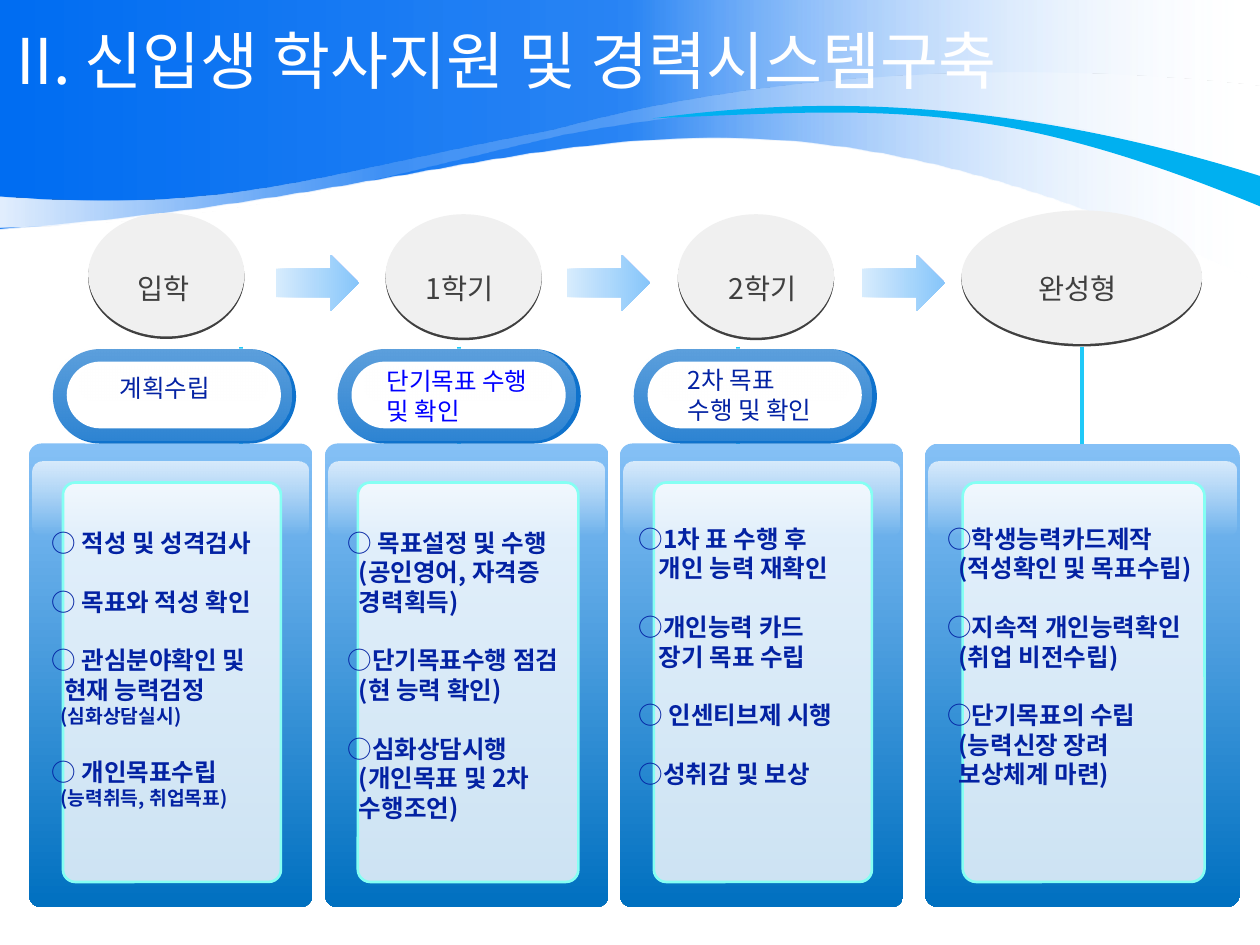
from lxml.etree import SubElement
from pptx import Presentation
from pptx.dml.color import RGBColor
from pptx.enum.shapes import MSO_CONNECTOR, MSO_SHAPE
from pptx.enum.text import MSO_ANCHOR, PP_ALIGN
from pptx.oxml.ns import qn
from pptx.util import Inches, Pt

FONT = "Noto Sans CJK KR"
COLORS = {
    "white": "FFFFFF", "band": "006DF2", "swoosh": "00B0F0", "navy": "0322A3",
    "blue": "0000FF", "label": "404040", "disc": "F0F0F0", "rim": "404040",
    "link": "20C9F8", "pill": "0F72CC", "edge": "85FFF3",
    "panel top": "85C0F6", "panel foot": "0070C0",
    "arrow tail": "D7ECFD", "arrow head": "86C5FA",
}
TITLE = "II. 신입생 학사지원 및 경력시스템구축"

# Gradient stops: position, colour, opacity (percent)
GLOSS = [(0, "white", 70), (100, "white", 0)]
PILL_SHEEN = [(0, "white", 33), (100, "white", 13)]
PANEL_FILL = [(0, "panel top", 100), (100, "panel foot", 100)]
ARROW_FILL = [(0, "arrow tail", 100), (100, "arrow head", 100)]
BAND_FILL = [(0, "band", 100), (50, "band", 83), (100, "white", 0)]
VEIL_FILL = [(0, "white", 90), (31, "white", 16), (86, "white", 24)]

# Outlines: frame, fill, steps (one point is a straight step, three a Bezier step)
OUTLINES = [
    ((-0.01, 0, 10.02, 2.24), BAND_FILL, [
        [(10.01, 0)], [(-0.01, 0)], [(-0.01, 1.81)],
        [(4.49, 1.5), (5.45, 0.14), (10.01, 2.24)]]),
    ((-0.08, 0.34, 10.09, 1.46), VEIL_FILL, [
        [(10.01, 0.69)], [(9.55, 0.63), (6.92, 0.34), (4.4, 1.03)],
        [(2.42, 1.4), (1.86, 1.69), (0.01, 1.56)], [(-0.01, 1.56)], [(-0.01, 1.81)],
        [(2.03, 1.73), (2.66, 1.49), (4.48, 1.07)],
        [(5.43, 0.9), (7.46, 0.55), (10.01, 1.39)]]),
    ((5.18, 0.69, 4.84, 0.96), "swoosh", [
        [(5.18, 0.94)], [(7.04, 0.86), (7.93, 0.78), (10.03, 1.65)], [(10.01, 1.4)],
        [(7.75, 0.69), (6.17, 0.81), (5.18, 0.94)]]),
]

# Stages: label, label left, disc (left, top, width, height), link x
STAGES = [
    ("입학", 0.86, (0.7, 1.69, 1.24, 0.98), 1.91),
    ("1학기", 3.21, (3.06, 1.7, 1.24, 0.98), 3.64),
    ("2학기", 5.61, (5.38, 1.7, 1.24, 0.98), 5.86),
    ("완성형", 8.11, (7.63, 1.67, 1.91, 1.06), 8.59),
]
ARROWS = [2.19, 4.5, 6.84]
# Pills: left, text box (left, top, width), colour, indent, wrap, lines
PILLS = [
    (0.39, (0.59, 2.91, 1.59), "navy", 0.26, False, ["계획수립"]),
    (2.65, (2.97, 2.86, 1.48), "blue", 0, True, ["단기목표 수행 및 확인"]),
    (5.0, (5.36, 2.85, 1.59), "navy", 0, False, ["2차 목표", "수행 및 확인"]),
]
# Panels: left, width, inner inset, text box (left, top, width),
# item indent, further-line indent, items (lists of lines)
PANELS = [
    (0.23, 2.25, 0.27, (0.31, 4.14, 1.95), 0, 0.1, [
        ["○ 적성 및 성격검사"], ["○ 목표와 적성 확인"],
        ["○ 관심분야확인 및", "현재 능력검정", "(심화상담실시)"],
        ["○ 개인목표수립", "(능력취득, 취업목표)"]]),
    (2.58, 2.25, 0.26, (2.66, 4.14, 2.19), 0, 0.09, [
        ["○ 목표설정 및 수행", "(공인영어, 자격증", "경력획득)"],
        ["○단기목표수행 점검", "(현 능력 확인)"],
        ["○심화상담시행", "(개인목표 및 2차", "수행조언)"]]),
    (4.92, 2.25, 0.27, (4.92, 4.11, 2.11), 0.05, 0.21, [
        ["○1차 표 수행 후", "개인 능력 재확인"],
        ["○개인능력 카드", "장기 목표 수립"],
        ["○ 인센티브제 시행"], ["○성취감 및 보상"]]),
    (7.34, 2.5, 0.3, (7.42, 4.11, 2.34), 0, 0.09, [
        ["○학생능력카드제작", "(적성확인 및 목표수립)"],
        ["○지속적 개인능력확인", "(취업 비전수립)"],
        ["○단기목표의 수립", "(능력신장 장려", "보상체계 마련)"]]),
]
SMALL_LINES = {"(심화상담실시)", "(능력취득, 취업목표)"}
LINE_HEIGHT = 16.8


def rgb(name):
    return RGBColor.from_string(COLORS[name])


def paint(shape, fill, angle=90, opacity=100, edge=None):
    """Fill with a colour name or a list of gradient stops."""
    shape.shadow.inherit = False
    if isinstance(fill, str):
        shape.fill.solid()
        shape.fill.fore_color.rgb = rgb(fill)
        if opacity < 100:
            color = shape._element.spPr.find(".//" + qn("a:srgbClr"))
            SubElement(color, qn("a:alpha"), val=str(opacity * 1000))
    else:
        shape.fill.gradient()
        gradient = shape._element.spPr.find(qn("a:gradFill"))
        stops = gradient.find(qn("a:gsLst"))
        for stop in list(stops):
            stops.remove(stop)
        for position, name, alpha in fill:
            stop = SubElement(stops, qn("a:gs"), pos=str(position * 1000))
            color = SubElement(stop, qn("a:srgbClr"), val=COLORS[name])
            SubElement(color, qn("a:alpha"), val=str(alpha * 1000))
        gradient.find(qn("a:lin")).set("ang", str(angle * 60000))
    if edge:
        shape.line.color.rgb = rgb(edge)
        shape.line.width = Pt(1.5)
    else:
        shape.line.fill.background()


def add_block(page, kind, frame, fill, corner=None, **style):
    shape = page.shapes.add_shape(kind, *map(Inches, frame))
    if corner is not None:
        shape.adjustments[0] = corner
    paint(shape, fill, **style)
    return shape


def add_outline(page, frame, fill, steps):
    """Draw a closed freeform whose three-point steps are Bezier curves."""
    left, top, width, height = map(Inches, frame)
    builder = page.shapes.build_freeform(0, 0)
    builder.add_line_segments([(width, 0), (width, height)], close=True)
    shape = builder.convert_to_shape()
    shape.left, shape.top, shape.width, shape.height = left, top, width, height
    route = shape._element.spPr.find(".//" + qn("a:pathLst"))[0]
    for child in list(route):
        route.remove(child)
    for index, step in enumerate(steps):
        tag = "a:moveTo" if index == 0 else "a:lnTo" if len(step) == 1 else "a:cubicBezTo"
        node = SubElement(route, qn(tag))
        for x, y in step:
            SubElement(node, qn("a:pt"), x=str(Inches(x) - left), y=str(Inches(y) - top))
    SubElement(route, qn("a:close"))
    paint(shape, fill, angle=0)


def add_box(page, left, top, width, height, wrap=False, anchor=MSO_ANCHOR.TOP):
    frame = page.shapes.add_textbox(*map(Inches, (left, top, width, height))).text_frame
    frame.word_wrap = wrap
    frame.vertical_anchor = anchor
    return frame


def add_span(para, text, size, color, bold=False):
    span = para.add_run()
    span.text = text
    span.font.size = Pt(size)
    span.font.name = FONT
    span.font.bold = bold
    span.font.color.rgb = rgb(color)
    SubElement(span.font._element, qn("a:ea"), typeface=FONT)
    return span


def add_line(frame, index, indent, height=LINE_HEIGHT, before=0):
    para = frame.paragraphs[0] if index == 0 else frame.add_paragraph()
    para._p.get_or_add_pPr().set("marL", str(Inches(indent)))
    para.line_spacing = Pt(height)
    if index and before:
        para.space_before = Pt(before)
    return para


def add_link(page, x):
    link = page.shapes.add_connector(
        MSO_CONNECTOR.STRAIGHT, Inches(x), Inches(2.75), Inches(x), Inches(4.36))
    link.line.color.rgb = rgb("link")
    link.line.width = Pt(2.25)
    SubElement(link._element.spPr, qn("a:effectLst"))


def add_stage(page, label, label_left, disc):
    """Add a disc with a thin dark rim below it, and its label."""
    oval = add_block(page, MSO_SHAPE.OVAL, disc, "disc")
    rim = SubElement(oval._element.spPr.find(qn("a:effectLst")), qn("a:outerShdw"),
                     blurRad="0", dist=str(Inches(0.02)), dir="5400000")
    SubElement(rim, qn("a:srgbClr"), val=COLORS["rim"])
    frame = add_box(page, label_left, 2.03, 0.88, 0.54, anchor=MSO_ANCHOR.MIDDLE)
    para = frame.paragraphs[0]
    para.alignment = PP_ALIGN.CENTER
    add_span(para, label, 28, "label").font._element.set("baseline", "21000")


def add_panel(page, left, width, inset, box, indent, further, items):
    rounded = MSO_SHAPE.ROUNDED_RECTANGLE
    add_block(page, rounded, (left, 3.52, width, 3.68), PANEL_FILL, 0.043)
    add_block(page, rounded, (left + 0.03, 3.66, width - 0.06, 0.59), GLOSS, 0.137)
    add_block(page, rounded, (left + inset, 3.83, width - 2 * inset + 0.02, 3.17),
              "white", 0.056, opacity=80, edge="edge")
    frame = add_box(page, *box, 2.9)
    index = 0
    for item in items:
        for row, text in enumerate(item):
            small = text in SMALL_LINES
            size, height, shift = (11, 13.2, 0.03) if small else (14, LINE_HEIGHT, 0)
            para = add_line(frame, index, further - shift if row else indent,
                            height, 0 if row else LINE_HEIGHT)
            if row == 0:
                add_span(para, text[0], size, "navy")
                text = text[1:]
            add_span(para, text, size, "navy", bold=True)
            index += 1


def add_pill(page, left, box, color, indent, wrap, lines):
    layers = [((0.03, 2.77, 1.93, 0.75), "pill", 0.5),
              ((0, 2.77, 1.92, 0.73), PILL_SHEEN, 0.5),
              ((0.14, 2.87, 1.7, 0.53), "white", 0.5),
              ((0.24, 2.91, 1.49, 0.27), GLOSS, 0.429)]
    for (offset, *rest), fill, corner in layers:
        add_block(page, MSO_SHAPE.ROUNDED_RECTANGLE, (left + offset, *rest), fill, corner)
    frame = add_box(page, *box, 0.57, wrap=wrap)
    for index, text in enumerate(lines):
        add_span(add_line(frame, index, indent), text, 14, color)


def main():
    deck = Presentation()
    deck.slide_width, deck.slide_height = Inches(10), Inches(7.5)
    page = deck.slides.add_slide(deck.slide_layouts[6])
    for outline in OUTLINES:
        add_outline(page, *outline)
    title = add_box(page, 0.03, 0.23, 9.34, 0.48, anchor=MSO_ANCHOR.MIDDLE)
    add_span(title.paragraphs[0], TITLE, 36, "white")
    for left in ARROWS:
        add_block(page, MSO_SHAPE.RIGHT_ARROW, (left, 2.02, 0.66, 0.45), ARROW_FILL, angle=0)
    for label, label_left, disc, link_x in STAGES:
        add_link(page, link_x)
        add_stage(page, label, label_left, disc)
    for panel in PANELS:
        add_panel(page, *panel)
    for pill in PILLS:
        add_pill(page, *pill)
    deck.save("out.pptx")


if __name__ == "__main__":
    main()
